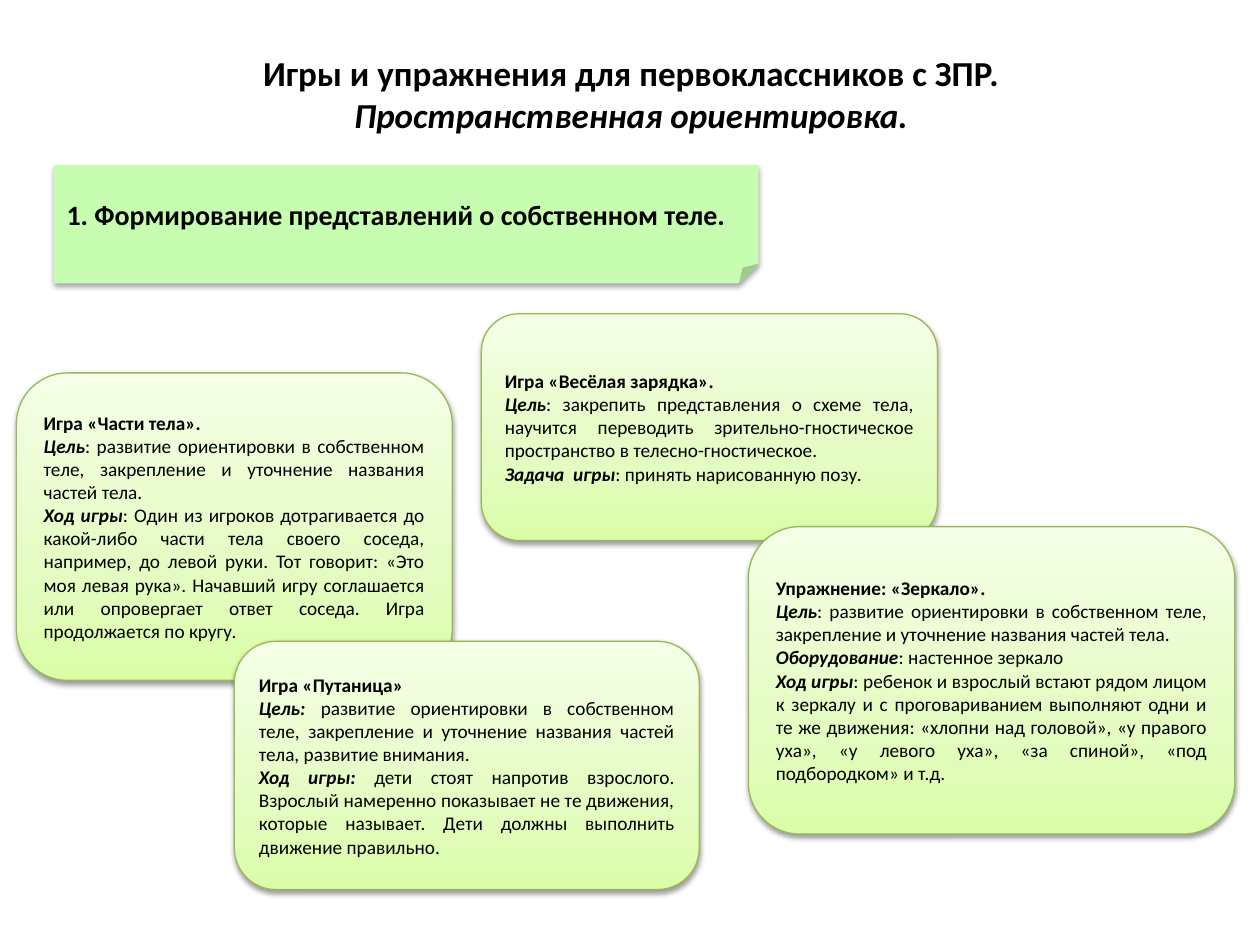
from lxml.etree import SubElement
from pptx import Presentation
from pptx.dml.color import RGBColor
from pptx.enum.shapes import MSO_SHAPE
from pptx.enum.text import MSO_ANCHOR, MSO_AUTO_SIZE, PP_ALIGN
from pptx.oxml.ns import qn
from pptx.util import Emu, Pt

PX = 9144  # EMU in one px, 100 px to the inch
HUES = {
    "text": "000000", "note": "C7FDB1", "edge": "98B955", "shade": "000000",
    "low": "DAFDA7", "mid": "E4FCC2", "high": "F5FFE7",
}
STOPS = [(0, "low"), (35, "mid"), (100, "high")]
BOLD = {"bold": True, "italic": False}
LABEL = {"bold": True, "italic": True}
PLAIN = {"bold": False, "italic": False}
AIM = "развитие ориентировки в собственном теле, закрепление и уточнение названия частей тела"

CARDS = [
    ((382, 249, 362, 180), "Игра «Весёлая зарядка».", [
        ("Цель", ": закрепить представления о схеме тела, научится переводить "
                 "зрительно-гностическое пространство в телесно-гностическое."),
        ("Задача  игры", ": принять нарисованную позу."),
    ]),
    ((13, 296, 346, 244), "Игра «Части тела».", [
        ("Цель", f": {AIM}."),
        ("Ход игры", ": Один из игроков дотрагивается до какой-либо части тела "
                     "своего соседа, например, до левой руки. Тот говорит: «Это моя "
                     "левая рука». Начавший игру соглашается или опровергает ответ "
                     "соседа. Игра продолжается по кругу."),
    ]),
    ((594, 418, 386, 244), "Упражнение: «Зеркало».", [
        ("Цель", f": {AIM}."),
        ("Оборудование", ": настенное зеркало"),
        ("Ход игры", ": ребенок и взрослый встают рядом лицом к зеркалу и с "
                     "проговариванием выполняют одни и те же движения: «хлопни над "
                     "головой», «у правого уха», «у левого уха», «за спиной», «под "
                     "подбородком» и т.д."),
    ]),
    ((186, 509, 369, 197), "Игра «Путаница»", [
        ("Цель: ", f"{AIM}, развитие внимания."),
        ("Ход игры: ", "дети стоят напротив взрослого. Взрослый намеренно показывает "
                       "не те движения, которые называет. Дети должны выполнить "
                       "движение правильно."),
    ]),
]


def color(name):
    return RGBColor.from_string(HUES[name])


class Deck:
    """Holds the style and the current slide."""

    font = "Calibri"

    def __init__(self):
        self.prs = Presentation()
        self.prs.slide_width = Emu(1000 * PX)
        self.prs.slide_height = Emu(750 * PX)
        self.slide = self.prs.slides.add_slide(self.prs.slide_layouts[5])

    def run(self, para, text, size, style):
        run = para.add_run()
        run.text = text
        form = {"name": self.font, "size": Pt(size), **style}
        for key, val in form.items():
            setattr(run.font, key, val)
        run.font.color.rgb = color("text")

    def frame(self, shape):
        """Prepare the text frame and return it."""
        frame = shape.text_frame
        form = {"word_wrap": True, "auto_size": MSO_AUTO_SIZE.NONE,
                "vertical_anchor": MSO_ANCHOR.MIDDLE}
        for key, val in form.items():
            setattr(frame, key, val)
        return frame

    def title(self, box, first, second, size):
        shape = self.slide.shapes.title
        for key, val in zip(("left", "top", "width", "height"), box):
            setattr(shape, key, Emu(val * PX))
        para = self.frame(shape).paragraphs[0]
        para.alignment = PP_ALIGN.CENTER
        self.run(para, first, size, BOLD)
        para.add_line_break()
        SubElement(para._p[-1], qn("a:rPr"), sz=str(size * 100))
        self.run(para, second, size, LABEL)

    def shape(self, kind, box):
        shape = self.slide.shapes.add_shape(kind, *(Emu(val * PX) for val in box))
        shape.shadow.inherit = False
        return shape

    def shade(self, shape, alpha, dist):
        """Cast a soft shadow straight down."""
        group = shape._element.spPr.find(qn("a:effectLst"))
        cast = SubElement(group, qn("a:outerShdw"), blurRad=str(Pt(3.1)),
                          dist=str(Pt(dist)), dir="5400000", rotWithShape="0")
        tint = SubElement(cast, qn("a:srgbClr"), val=HUES["shade"])
        SubElement(tint, qn("a:alpha"), val=str(alpha * 1000))

    def blend(self, shape):
        """Fill with the card gradient, rising from the bottom edge."""
        shape.fill.gradient()
        shape.fill.gradient_angle = 90
        stops = shape._element.spPr.find(".//" + qn("a:gsLst"))
        stops.clear()
        for pos, name in STOPS:
            stop = SubElement(stops, qn("a:gs"), pos=str(pos * 1000))
            SubElement(stop, qn("a:srgbClr"), val=HUES[name])

    def note(self, box, text):
        shape = self.shape(MSO_SHAPE.FOLDED_CORNER, box)
        shape.fill.solid()
        shape.fill.fore_color.rgb = color("note")
        shape.line.fill.background()
        self.shade(shape, 35, 1.8)
        para = self.frame(shape).paragraphs[0]
        para.alignment = PP_ALIGN.LEFT
        self.run(para, text, 16, BOLD)

    def card(self, box, head, items):
        shape = self.shape(MSO_SHAPE.ROUNDED_RECTANGLE, box)
        self.blend(shape)
        shape.line.color.rgb = color("edge")
        shape.line.width = Pt(0.75)
        self.shade(shape, 38, 1.6)
        frame = self.frame(shape)
        para = frame.paragraphs[0]
        para.alignment = PP_ALIGN.JUSTIFY
        self.run(para, head, 11, BOLD)
        for label, text in items:
            para = frame.add_paragraph()
            para.alignment = PP_ALIGN.JUSTIFY
            self.run(para, label, 11, LABEL)
            self.run(para, text, 11, PLAIN)


def main():
    deck = Deck()
    deck.title((51, 36, 900, 77), "Игры и упражнения для первоклассников с ЗПР.",
               "Пространственная ориентировка.", 20)
    deck.note((43, 131, 559, 94), "1. Формирование представлений о собственном теле.")
    for card in CARDS:
        deck.card(*card)
    deck.prs.save("out.pptx")


if __name__ == "__main__":
    main()
